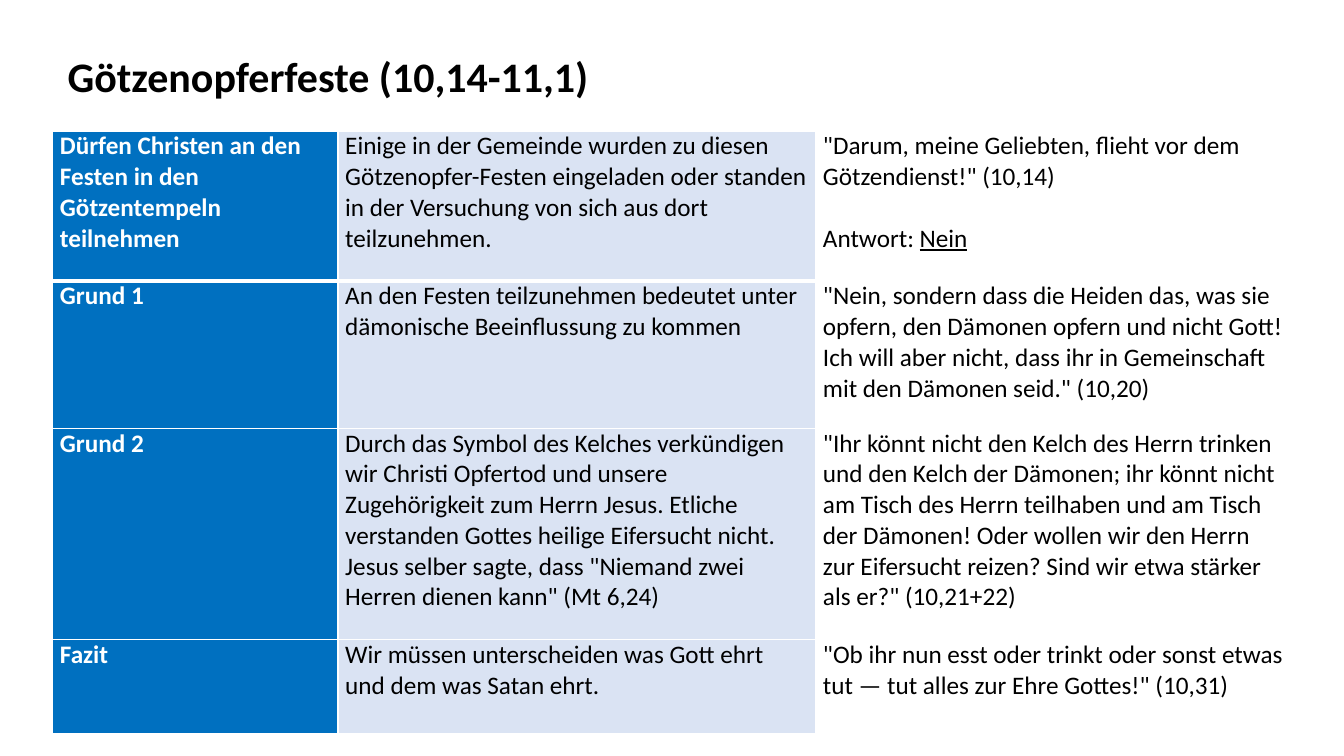
from lxml.etree import SubElement
from pptx import Presentation
from pptx.dml.color import RGBColor
from pptx.enum.text import MSO_ANCHOR, MSO_AUTO_SIZE, PP_ALIGN
from pptx.oxml import parse_xml
from pptx.oxml.ns import nsdecls, qn
from pptx.util import Cm, Pt


def style(p, size, color, bold):
    f = p.font
    f.name, f.size, f.bold = "Calibri", Pt(size), bold
    f.color.rgb = RGBColor.from_string(color)


def add_border(cell, position, side, width):
    ln = parse_xml(f'<a:{side} {nsdecls("a")} w="{Pt(width)}"/>')
    fill = SubElement(ln, qn("a:solidFill"))
    SubElement(fill, qn("a:srgbClr"), val="FFFFFF")
    cell._tc.get_or_add_tcPr().insert(position, ln)


prs = Presentation()
prs.slide_width, prs.slide_height = Cm(33.87), Cm(19.05)
s = prs.slides.add_slide(prs.slide_layouts[5])

# Title
title = s.shapes.title
title.left, title.top, title.width, title.height = Cm(1.45), Cm(1.14), Cm(13.79), Cm(1.54)
tf = title.text_frame
tf.text = "Götzenopferfeste (10,14-11,1)"
tf.word_wrap = False
tf.auto_size = MSO_AUTO_SIZE.SHAPE_TO_FIT_TEXT
tf.vertical_anchor = MSO_ANCHOR.TOP
p = tf.paragraphs[0]
p.alignment = PP_ALIGN.LEFT
style(p, 30, "000000", True)

# Table content: topic, explanation, Bible quote
rows = [
    ("Dürfen Christen an den Festen in den Götzentempeln teilnehmen",
     "Einige in der Gemeinde wurden zu diesen Götzenopfer-Festen eingeladen oder "
     "standen in der Versuchung von sich aus dort teilzunehmen.",
     '"Darum, meine Geliebten, flieht vor dem Götzendienst!" (10,14)'),
    ("Grund 1",
     "An den Festen teilzunehmen bedeutet unter dämonische Beeinflussung zu kommen",
     '"Nein, sondern dass die Heiden das, was sie opfern, den Dämonen opfern und nicht '
     'Gott! Ich will aber nicht, dass ihr in Gemeinschaft mit den Dämonen seid." (10,20)'),
    ("Grund 2",
     "Durch das Symbol des Kelches verkündigen wir Christi Opfertod und unsere "
     "Zugehörigkeit zum Herrn Jesus. Etliche verstanden Gottes heilige Eifersucht nicht. "
     'Jesus selber sagte, dass "Niemand zwei Herren dienen kann" (Mt 6,24)',
     '"Ihr könnt nicht den Kelch des Herrn trinken und den Kelch der Dämonen; ihr könnt '
     "nicht am Tisch des Herrn teilhaben und am Tisch der Dämonen! Oder wollen wir den "
     'Herrn zur Eifersucht reizen? Sind wir etwa stärker als er?" (10,21+22)'),
    ("Fazit",
     "Wir müssen unterscheiden was Gott ehrt und dem was Satan ehrt.",
     '"Ob ihr nun esst oder trinkt oder sonst etwas tut — tut alles zur Ehre Gottes!" (10,31)'),
]
col_widths = [7.19, 12.04, 12.04]
row_heights = [3.78, 3.71, 5.33, 2.36]
col_styles = [("0070C0", "FFFFFF", True), ("DAE3F3", "000000", False), ("FFFFFF", "000000", False)]

table = s.shapes.add_table(len(rows), len(col_widths), Cm(1.33), Cm(3.3),
                           Cm(sum(col_widths)), Cm(sum(row_heights))).table
table.first_row = table.horz_banding = False
for col, width in zip(table.columns, col_widths):
    col.width = Cm(width)
for row, height in zip(table.rows, row_heights):
    row.height = Cm(height)

# Answer below the first quote
p = table.cell(0, 2).text_frame.add_paragraph()
p.space_before = Pt(22)
p.add_run().text = "Antwort: "
r = p.add_run()
r.text = "Nein"
r.font.underline = True

# Cell text, fills and borders
for i, texts in enumerate(rows):
    for j, (text, (fill, color, bold)) in enumerate(zip(texts, col_styles)):
        cell = table.cell(i, j)
        cell.margin_left = cell.margin_right = Cm(0.18)
        cell.margin_top = cell.margin_bottom = 0
        cell.fill.solid()
        cell.fill.fore_color.rgb = RGBColor.from_string(fill)
        widths = {"lnL": 1, "lnR": 1, "lnT": 3 if i == 1 else 1, "lnB": 3 if i == 0 else 1}
        for k, (side, width) in enumerate(widths.items()):
            add_border(cell, k, side, width)
        cell.text_frame.paragraphs[0].add_run().text = text
        for p in cell.text_frame.paragraphs:
            style(p, 18, color, bold)

prs.save("out.pptx")
